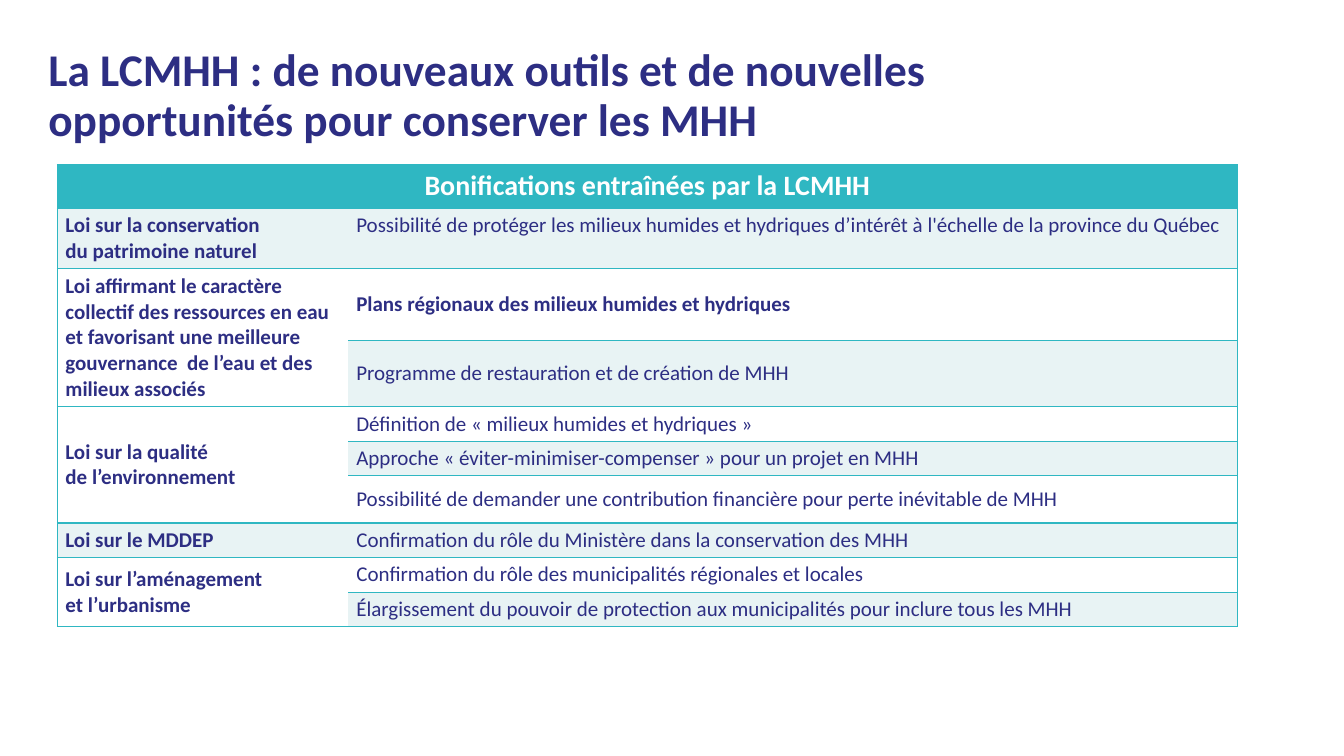
from copy import deepcopy

from lxml import etree
from pptx import Presentation
from pptx.dml.color import RGBColor
from pptx.enum.text import MSO_ANCHOR, PP_ALIGN
from pptx.oxml.ns import qn
from pptx.util import Cm, Pt

TOP, MIDDLE = MSO_ANCHOR.TOP, MSO_ANCHOR.MIDDLE
LEFT, CENTER = PP_ALIGN.LEFT, PP_ALIGN.CENTER

NAVY, TEAL, PALE, WHITE = "2D2E83", "2FB7C2", "E8F3F4", "FFFFFF"
TITLE = "La LCMHH : de nouveaux outils et de nouvelles opportunités pour conserver les MHH"
HEADER = "Bonifications entraînées par la LCMHH"
KEY_PROVISION = "Plans régionaux des milieux humides et hydriques"
ACTS = [
    ("Loi sur la conservation \ndu patrimoine naturel", [
        "Possibilité de protéger les milieux humides et hydriques d’intérêt à l'échelle de la province du Québec",
    ]),
    ("Loi affirmant le caractère collectif des ressources en eau et favorisant "
     "une meilleure gouvernance  de l’eau et des milieux associés", [
        KEY_PROVISION,
        "Programme de restauration et de création de MHH",
    ]),
    ("Loi sur la qualité \nde l’environnement", [
        "Définition de « milieux humides et hydriques »",
        "Approche « éviter-minimiser-compenser » pour un projet en MHH",
        "Possibilité de demander une contribution financière pour perte inévitable de MHH",
    ]),
    ("Loi sur le MDDEP", [
        "Confirmation du rôle du Ministère dans la conservation des MHH",
    ]),
    ("Loi sur l’aménagement \net l’urbanisme", [
        "Confirmation du rôle des municipalités régionales et locales",
        "Élargissement du pouvoir de protection aux municipalités pour inclure tous les MHH",
    ]),
]
COLUMN_WIDTHS = [7.33, 22.4]
ROW_HEIGHTS = [1.11, 1.51, 1.82, 1.66, 0.87, 0.87, 1.19, 0.87, 0.87, 0.87]


def color(hex_string):
    return RGBColor.from_string(hex_string)


def write(frame, text, size, ink, bold, align=LEFT):
    """Fill the first paragraph, giving its line breaks the format of its text."""
    para = frame.paragraphs[0]
    para.text = text
    para.alignment = align
    formats = {"name": "Calibri", "size": Pt(size), "bold": bold}
    for span in para.runs:
        for name, value in formats.items():
            setattr(span.font, name, value)
        span.font.color.rgb = color(ink)
    for line_break in para._p.findall(qn("a:br")):
        line_break.append(deepcopy(para.runs[0].font._element))
    return para


def set_borders(cell, edges):
    """Draw the named edges (L, R, T, B) in teal and clear the others."""
    properties = cell._tc.get_or_add_tcPr()
    for index, edge in enumerate("LRTB"):
        line = etree.Element(qn(f"a:ln{edge}"), w=str(Pt(1)))
        if edge in edges:
            fill = etree.SubElement(line, qn("a:solidFill"))
            etree.SubElement(fill, qn("a:srgbClr"), val=TEAL)
        else:
            etree.SubElement(line, qn("a:noFill"))
        properties.insert(index, line)


def style_cell(cell, fill, edges, anchor=MIDDLE):
    formats = {
        "margin_left": Cm(0.2), "margin_right": Cm(0.2),
        "margin_top": Cm(0.1), "margin_bottom": Cm(0.1),
        "vertical_anchor": anchor,
    }
    for name, value in formats.items():
        setattr(cell, name, value)
    cell.fill.solid()
    cell.fill.fore_color.rgb = color(fill)
    set_borders(cell, edges)


def add_title(slide, left, top, width, height):
    box = slide.shapes.add_textbox(Cm(left), Cm(top), Cm(width), Cm(height))
    box.text_frame.word_wrap = True
    box.text_frame.vertical_anchor = MIDDLE
    write(box.text_frame, TITLE, 32.4, NAVY, True).line_spacing = 0.9


def add_acts_table(slide, left, top):
    table = slide.shapes.add_table(
        len(ROW_HEIGHTS), len(COLUMN_WIDTHS), Cm(left), Cm(top),
        Cm(sum(COLUMN_WIDTHS)), Cm(sum(ROW_HEIGHTS))).table
    for column, width in zip(table.columns, COLUMN_WIDTHS):
        column.width = Cm(width)
    for row, height in zip(table.rows, ROW_HEIGHTS):
        row.height = Cm(height)

    header = table.cell(0, 0)
    header.merge(table.cell(0, 1))
    for column in range(2):
        style_cell(table.cell(0, column), TEAL, "LRTB", TOP)
    write(header.text_frame, HEADER, 20, WHITE, True, CENTER)

    first = 1
    for act, provisions in ACTS:
        last = first + len(provisions) - 1
        act_cell = table.cell(first, 0)
        if last > first:
            act_cell.merge(table.cell(last, 0))
        for row, provision in enumerate(provisions, first):
            fill = PALE if row % 2 else WHITE
            cell = table.cell(row, 1)
            style_cell(cell, fill, "RTB", TOP if row == 1 else MIDDLE)
            write(cell.text_frame, provision, 15, NAVY, provision == KEY_PROVISION)
            style_cell(table.cell(row, 0), fill, "LTB" if row == first else "L")
        write(act_cell.text_frame, act, 15, NAVY, True)
        first = last + 1


def main():
    deck = Presentation()
    deck.slide_width, deck.slide_height = Cm(33.87), Cm(19.05)
    slide = deck.slides.add_slide(deck.slide_layouts[6])
    add_acts_table(slide, 1.45, 4.15)
    add_title(slide, 0.97, 1.27, 24.66, 2.34)
    deck.save("out.pptx")


if __name__ == "__main__":
    main()
